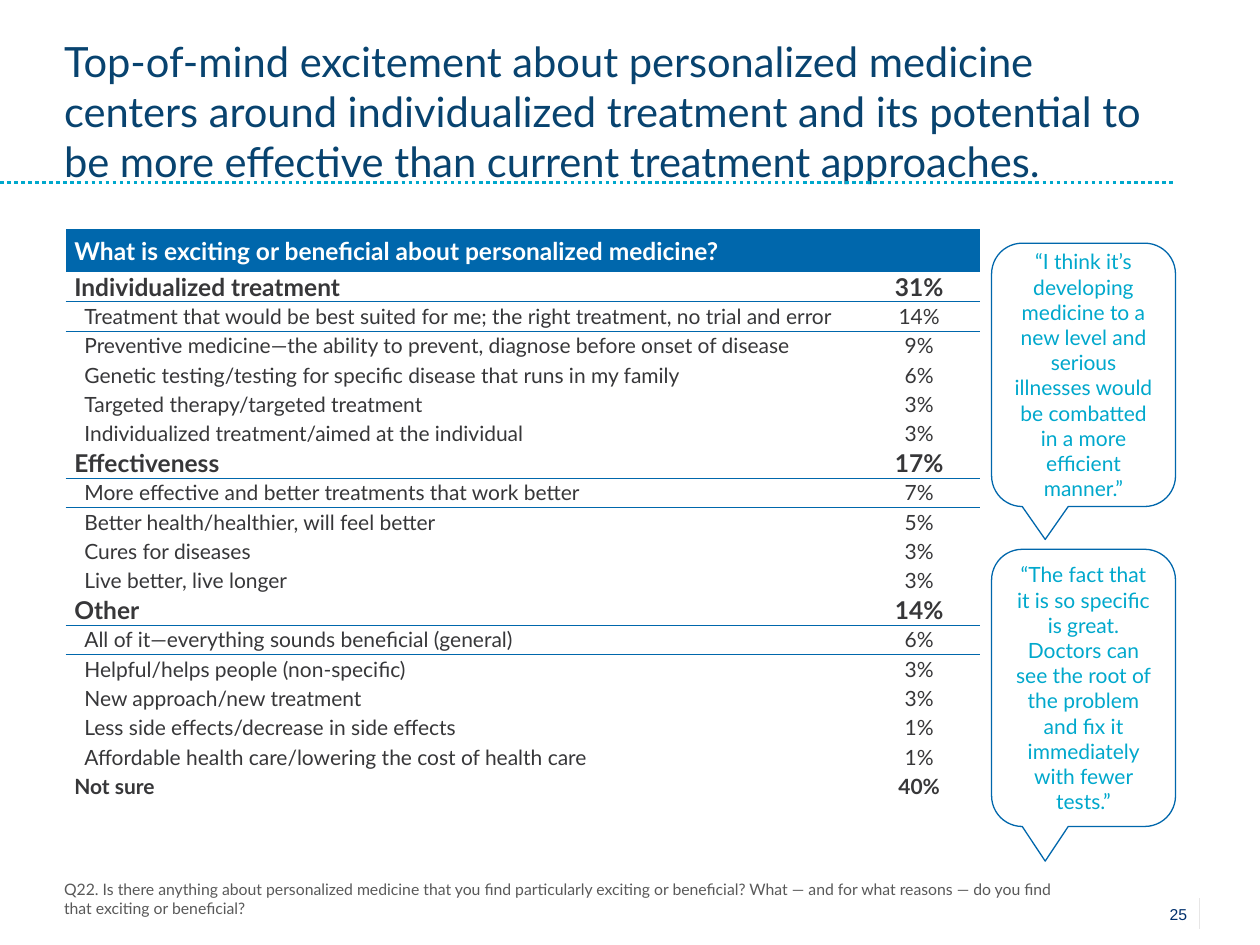
from lxml.etree import SubElement
from pptx import Presentation
from pptx.dml.color import RGBColor
from pptx.enum.dml import MSO_LINE
from pptx.enum.shapes import MSO_CONNECTOR, MSO_SHAPE
from pptx.enum.text import MSO_ANCHOR, PP_ALIGN
from pptx.oxml import parse_xml
from pptx.oxml.ns import nsdecls, qn
from pptx.util import Inches, Pt

COLORS = {
    "title": "08436F",
    "blue": "0067AC",
    "cyan": "00A8CC",
    "body": "373739",
    "footnote": "595959",
    "number": "00306C",
    "divider": "E7E6E6",
    "white": "FFFFFF",
}

TITLE = (
    "Top-of-mind excitement about personalized medicine centers around individualized "
    "treatment and its potential to be more effective than current treatment approaches."
)
QUESTION = (
    "Q22. Is there anything about personalized medicine that you find particularly exciting "
    "or beneficial? What — and for what reasons — do you find that exciting or beneficial?"
)
QUOTES = [
    ("“I think it’s developing medicine to a new level and serious illnesses would be "
     "combatted in a more efficient manner.”", (7.87, 1.93, 1.46, 2.09)),
    ("“The fact that it is so specific is great. Doctors can see the root of the problem "
     "and fix it immediately with fewer tests.”", (7.87, 4.36, 1.46, 2.2)),
]
TABLE_HEADING = "What is exciting or beneficial about personalized medicine?"
GROUPS = [
    ("Individualized treatment", 31, [
        ("Treatment that would be best suited for me; the right treatment, no trial and error", 14),
        ("Preventive medicine—the ability to prevent, diagnose before onset of disease", 9),
        ("Genetic testing/testing for specific disease that runs in my family", 6),
        ("Targeted therapy/targeted treatment", 3),
        ("Individualized treatment/aimed at the individual", 3),
    ]),
    ("Effectiveness", 17, [
        ("More effective and better treatments that work better", 7),
        ("Better health/healthier, will feel better", 5),
        ("Cures for diseases", 3),
        ("Live better, live longer", 3),
    ]),
    ("Other", 14, [
        ("All of it—everything sounds beneficial (general)", 6),
        ("Helpful/helps people (non-specific)", 3),
        ("New approach/new treatment", 3),
        ("Less side effects/decrease in side effects", 1),
        ("Affordable health care/lowering the cost of health care", 1),
    ]),
    ("Not sure", 40, []),
]


def color(name):
    return RGBColor.from_string(COLORS[name])


def apply(target, values):
    for name, value in values.items():
        setattr(target, name, value)


def write(frame, text, size, color_name, align=PP_ALIGN.LEFT, bold=False, font="Lato"):
    paragraph = frame.paragraphs[0]
    paragraph.alignment = align
    run = paragraph.add_run()
    run.text = text
    apply(run.font, {"size": Pt(size), "name": font, "bold": bold})
    run.font.color.rgb = color(color_name)
    return paragraph


def add_text(slide, box, text, size, color_name, anchor=MSO_ANCHOR.TOP, **style):
    shape = slide.shapes.add_textbox(*map(Inches, box))
    apply(shape.text_frame, {"word_wrap": True, "vertical_anchor": anchor})
    write(shape.text_frame, text, size, color_name, **style)


def add_line(slide, start, end, color_name, width, dash=MSO_LINE.SOLID):
    connector = slide.shapes.add_connector(
        MSO_CONNECTOR.STRAIGHT, *map(Inches, start + end))
    apply(connector.line, {"width": Pt(width), "dash_style": dash})
    connector.line.color.rgb = color(color_name)
    SubElement(connector._element.spPr, qn("a:effectLst"))


def add_title(slide, box):
    left, top, width, height = box
    add_text(slide, box, TITLE, 23.8, "title", MSO_ANCHOR.MIDDLE)
    baseline = top + height + 0.03
    add_line(slide, (0, baseline), (left + width, baseline), "cyan", 2, MSO_LINE.ROUND_DOT)


def add_footer(slide, box):
    left, top, width, height = box
    add_text(slide, (left, top, 8.08, height), QUESTION, 9, "footnote")
    right, number_top = left + width, top + 0.2
    add_text(slide, (right - 0.8, number_top, 0.8, 0.24), "25", 9, "number",
             align=PP_ALIGN.RIGHT, font="Arial")
    add_line(slide, (right, number_top), (right, number_top + 0.24), "divider", 0.75)


def add_bottom_border(cell):
    cell._tc.get_or_add_tcPr().insert(0, parse_xml(
        f'<a:lnB {nsdecls("a")} w="{Pt(0.25)}"><a:solidFill>'
        f'<a:srgbClr val="{COLORS["blue"]}"/></a:solidFill></a:lnB>'))


def fill_row(cells, label, percent, size, bold, indent, ruled):
    texts = [(label, PP_ALIGN.LEFT), (f"{percent}%", PP_ALIGN.CENTER)]
    for cell, (text, align) in zip(cells, texts):
        paragraph = write(cell.text_frame, text, size, "body", align, bold)
        if indent and align == PP_ALIGN.LEFT:
            paragraph._p.get_or_add_pPr().set("marL", str(Inches(0.08)))
        if ruled:
            add_bottom_border(cell)


def add_answer_table(slide, box):
    left, top, width, height = box
    rows = []
    for label, percent, items in GROUPS:
        rows.append((label, percent, 14 if items else 12, True, False, bool(items)))
        for index, (item, share) in enumerate(items):
            rows.append((item, share, 12, False, True, index == 0))

    frame = slide.shapes.add_table(len(rows) + 1, 2, *map(Inches, box))
    table = frame.table
    apply(table, {"first_row": False, "horz_banding": False})
    table._tbl.tblPr.find(qn("a:tableStyleId")).text = "{2D5ABB26-0587-4C30-8999-92F81FD0307C}"
    for column, column_width in zip(table.columns, (width - 0.97, 0.97)):
        column.width = Inches(column_width)
    heading_height = 0.34
    for index, row in enumerate(table.rows):
        row.height = Inches((height - heading_height) / len(rows) if index else heading_height)
        for cell in row.cells:
            apply(cell, {"margin_left": Inches(0.07), "margin_right": Inches(0.07),
                         "margin_top": 0, "margin_bottom": 0,
                         "vertical_anchor": MSO_ANCHOR.MIDDLE})
            cell.fill.background()

    heading = table.cell(0, 0)
    heading.merge(table.cell(0, 1))
    heading.fill.solid()
    heading.fill.fore_color.rgb = color("blue")
    write(heading.text_frame, TABLE_HEADING, 14, "white", bold=True)
    for index, values in enumerate(rows, 1):
        fill_row(table.rows[index].cells, *values)


def add_quote(slide, box, text):
    shape = slide.shapes.add_shape(MSO_SHAPE.ROUNDED_RECTANGULAR_CALLOUT, *map(Inches, box))
    shape.shadow.inherit = False
    shape.fill.background()
    shape.line.color.rgb = color("blue")
    shape.line.width = Pt(0.75)
    apply(shape.text_frame, {"word_wrap": True, "vertical_anchor": MSO_ANCHOR.MIDDLE})
    write(shape.text_frame, text, 12, "cyan", PP_ALIGN.CENTER)


def main():
    presentation = Presentation()
    apply(presentation, {"slide_width": Inches(10), "slide_height": Inches(7.5)})
    slide = presentation.slides.add_slide(presentation.slide_layouts[6])
    add_footer(slide, (0.41, 6.93, 9.11, 0.4))
    add_answer_table(slide, (0.52, 1.82, 7.26, 4.54))
    add_title(slide, (0.41, 0.34, 8.92, 1.08))
    for text, box in QUOTES:
        add_quote(slide, box, text)
    presentation.save("out.pptx")


if __name__ == "__main__":
    main()
